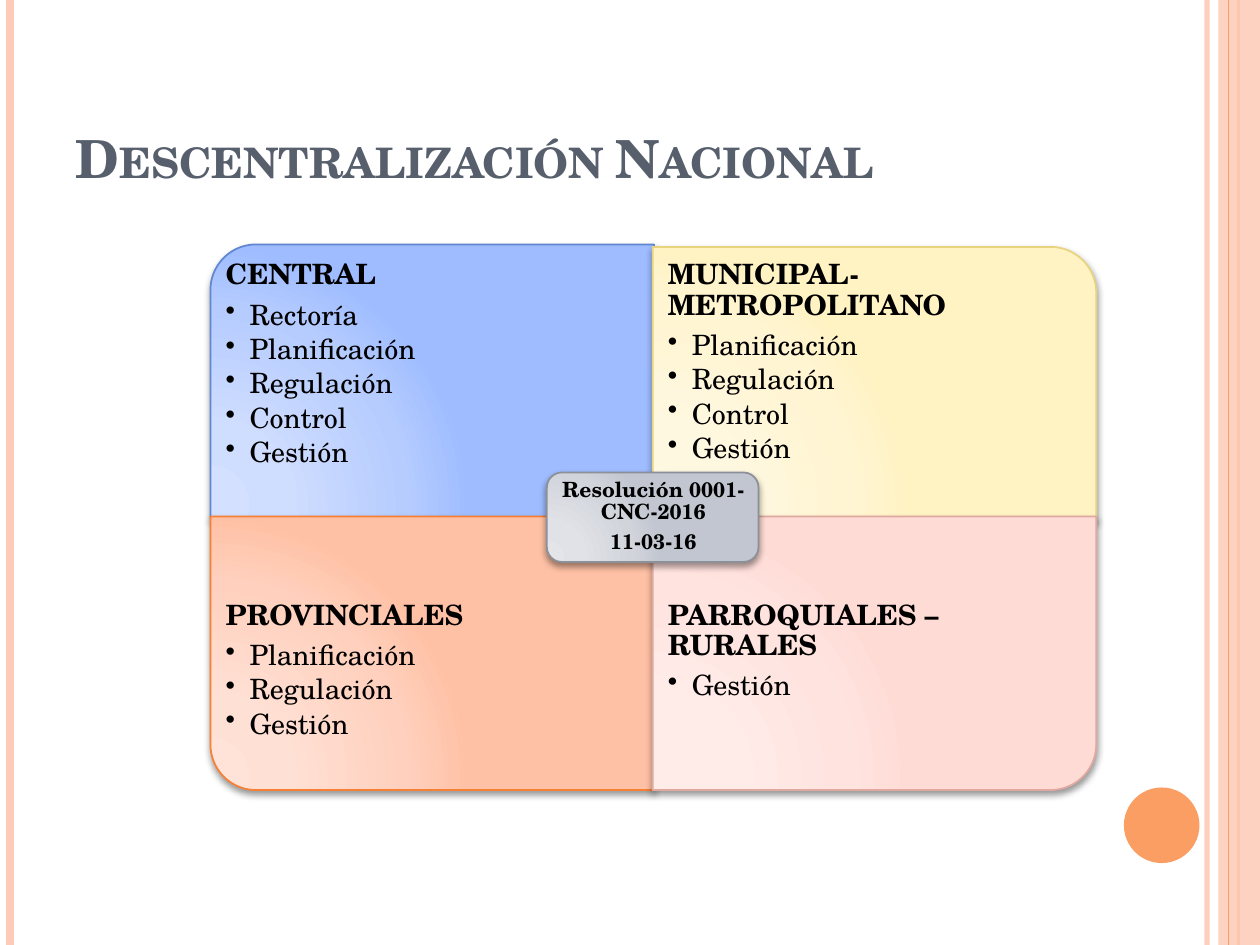
import pptx
import pptx.util
import pptx.dml.color
import pptx.enum.shapes
import pptx.enum.text
import pptx.oxml
import pptx.oxml.ns

Inches = pptx.util.Inches
Pt = pptx.util.Pt
RGBColor = pptx.dml.color.RGBColor
Shape = pptx.enum.shapes.MSO_SHAPE
Align = pptx.enum.text.PP_ALIGN
Anchor = pptx.enum.text.MSO_ANCHOR

FONT = "TeX Gyre Schola"
BLACK = RGBColor(0x00, 0x00, 0x00)
SLATE = RGBColor(0x57, 0x5F, 0x6D)
PEACH = RGBColor(0xFD, 0xCC, 0xB8)
ORANGE = RGBColor(0xFB, 0x9E, 0x64)
BLUE_FILL = [RGBColor.from_string(c) for c in ("D3E0FF", "CFDDFF", "B6CCFF", "9EBCFF")]
BLUE_LINE = RGBColor(0x60, 0x87, 0xCF)
YELLOW_FILL = [RGBColor.from_string(c) for c in ("FFF9E4", "FFF8E1", "FFF5D2", "FFF3C4")]
YELLOW_LINE = RGBColor(0xE8, 0xD3, 0x7E)
CORAL_FILL = [RGBColor.from_string(c) for c in ("FFE3D8", "FFE0D4", "FFD0BD", "FFC1A5")]
CORAL_LINE = RGBColor(0xF7, 0x80, 0x35)
PINK_FILL = [RGBColor.from_string(c) for c in ("FFEEEB", "FFECE9", "FFE3DF", "FFDBD5")]
PINK_LINE = RGBColor(0xDF, 0xA9, 0xA0)
GREY_FILL = [RGBColor.from_string(c) for c in ("E3E5E9", "E0E2E7", "D1D4DB", "C2C6D0")]
GREY_LINE = RGBColor(0x8C, 0x90, 0x99)

STOPS = (0, 30, 75, 100)
LEFT, MIDDLE = 1.67, 5.18
QUADRANT_WIDTH, QUADRANT_HEIGHT, LIST_HEIGHT = 3.52, 2.17, 1.62
UPPER_LISTS, LOWER_LISTS = 1.95, 4.65
QUADRANTS = [
    (LEFT, 1.94, 270, BLUE_FILL, BLUE_LINE, UPPER_LISTS, "CENTRAL",
     ["Rectoría", "Planificación", "Regulación", "Control", "Gestión"]),
    (MIDDLE, 1.96, 0, YELLOW_FILL, YELLOW_LINE, UPPER_LISTS, "MUNICIPAL- METROPOLITANO",
     ["Planificación", "Regulación", "Control", "Gestión"]),
    (LEFT, 4.1, 180, CORAL_FILL, CORAL_LINE, LOWER_LISTS, "PROVINCIALES",
     ["Planificación", "Regulación", "Gestión"]),
    (MIDDLE, 4.1, 90, PINK_FILL, PINK_LINE, LOWER_LISTS, "PARROQUIALES – RURALES",
     ["Gestión"]),
]


def element(xml):
    return pptx.oxml.parse_xml(xml.replace(">", f" {pptx.oxml.ns.nsdecls('a')}>", 1))


class SlideBuilder:
    """Draws styled elements on the current slide."""

    def __init__(self, slide):
        self.slide = slide

    def set_alpha(self, properties, percent):
        for color in properties.iter(pptx.oxml.ns.qn("a:srgbClr")):
            color.append(element(f'<a:alpha val="{percent * 1000}"></a:alpha>'))

    def rule(self, x, color, width, alpha=100):
        line = self.slide.shapes.add_connector(
            pptx.enum.shapes.MSO_CONNECTOR.STRAIGHT, Inches(x), 0, Inches(x), Inches(7.5))
        line.line.color.rgb = color
        line.line.width = Pt(width)
        properties = line._element.spPr
        properties.append(element("<a:effectLst></a:effectLst>"))
        if alpha < 100:
            self.set_alpha(properties, alpha)

    def shape(self, kind, left, top, width, height):
        shape = self.slide.shapes.add_shape(
            kind, Inches(left), Inches(top), Inches(width), Inches(height))
        shape.shadow.inherit = False
        return shape

    def flat(self, kind, left, top, width, height, color, alpha=100):
        shape = self.shape(kind, left, top, width, height)
        shape.fill.solid()
        shape.fill.fore_color.rgb = color
        shape.line.fill.background()
        if alpha < 100:
            self.set_alpha(shape._element.spPr, alpha)

    def panel(self, kind, left, top, width, height, colors, line_color, rotation=0):
        if rotation % 180:
            left, top = left + (width - height) / 2, top + (height - width) / 2
            width, height = height, width
        shape = self.shape(kind, left, top, width, height)
        shape.rotation = rotation
        shape.line.color.rgb = line_color
        shape.line.width = Pt(1)
        shape.fill.background()
        properties = shape._element.spPr
        stops = "".join(f'<a:gs pos="{stop * 1000}"><a:srgbClr val="{color}"/></a:gs>'
                        for stop, color in zip(STOPS, colors))
        gradient = element(
            f'<a:gradFill rotWithShape="1"><a:gsLst>{stops}</a:gsLst><a:path path="circle">'
            '<a:fillToRect l="5000" t="100000" r="120000" b="10000"/></a:path></a:gradFill>')
        properties.replace(properties.find(pptx.oxml.ns.qn("a:noFill")), gradient)
        properties.find(pptx.oxml.ns.qn("a:effectLst")).append(element(
            f'<a:outerShdw blurRad="{Pt(4)}" dist="{Pt(2)}" dir="5400000" rotWithShape="0">'
            '<a:srgbClr val="000000"><a:alpha val="40000"/></a:srgbClr></a:outerShdw>'))

    def format_paragraph(self, paragraph, size, color, bold):
        font = paragraph.font
        font.name, font.size, font.bold = FONT, Pt(size), bold
        font.color.rgb = color

    def text(self, left, top, width, height, inset, size, headings, items=(),
             anchor=Anchor.TOP, align=Align.LEFT):
        box = self.slide.shapes.add_textbox(
            Inches(left), Inches(top), Inches(width), Inches(height))
        frame = box.text_frame
        frame.word_wrap = True
        frame.vertical_anchor = anchor
        frame.margin_left = frame.margin_right = Inches(inset)
        frame.margin_top = frame.margin_bottom = Inches(inset)
        frame.text = "\n".join([*headings, *items])
        for index, paragraph in enumerate(frame.paragraphs):
            heading = index < len(headings)
            self.format_paragraph(paragraph, size, BLACK, heading)
            paragraph.alignment = align
            paragraph.line_spacing = 0.9
            paragraph.space_after = Pt(size * (0.35 if heading else 0.15))
            if not heading:
                self.bullet(paragraph)

    def bullet(self, paragraph):
        paragraph.level = 1
        properties = paragraph._p.get_or_add_pPr()
        properties.set("marL", str(Inches(0.19)))
        properties.set("indent", str(-Inches(0.19)))
        properties.find(pptx.oxml.ns.qn("a:defRPr")).addprevious(
            element('<a:buChar char="•"></a:buChar>'))

    def title(self, text):
        title = self.slide.shapes.title
        title.left, title.top = Inches(0.5), Inches(0.3)
        title.width, title.height = Inches(8.17), Inches(1.25)
        frame = title.text_frame
        frame.text = text
        frame.vertical_anchor = Anchor.BOTTOM
        paragraph = frame.paragraphs[0]
        paragraph.alignment = Align.LEFT
        self.format_paragraph(paragraph, 30, SLATE, True)
        paragraph.runs[0].font._element.set("cap", "small")


def main():
    presentation = pptx.Presentation()
    presentation.slide_width, presentation.slide_height = Inches(10), Inches(7.5)
    builder = SlideBuilder(presentation.slides.add_slide(presentation.slide_layouts[5]))

    builder.rule(9.58, PEACH, 3, 93)
    builder.rule(0.08, PEACH, 4.5)
    builder.rule(9.83, ORANGE, 1.5)
    builder.flat(Shape.RECTANGLE, 9.67, 0, 0.33, 7.5, PEACH, 87)
    builder.rule(9.75, ORANGE, 0.75)
    builder.flat(Shape.OVAL, 8.92, 6.25, 0.6, 0.6, ORANGE)

    for left, top, rotation, colors, line_color, list_top, heading, items in QUADRANTS:
        builder.panel(Shape.ROUND_1_RECTANGLE, left, top, QUADRANT_WIDTH, QUADRANT_HEIGHT,
                      colors, line_color, rotation)
        builder.text(left, list_top, QUADRANT_WIDTH, LIST_HEIGHT, 0.12, 16, [heading], items)

    builder.panel(Shape.ROUNDED_RECTANGLE, 4.34, 3.75, 1.68, 0.71, GREY_FILL, GREY_LINE)
    builder.text(4.38, 3.78, 1.61, 0.64, 0.05, 12, ["Resolución 0001-CNC-2016", "11-03-16"],
                 anchor=Anchor.MIDDLE, align=Align.CENTER)
    builder.title("Descentralización Nacional")
    presentation.save("out.pptx")


if __name__ == "__main__":
    main()
